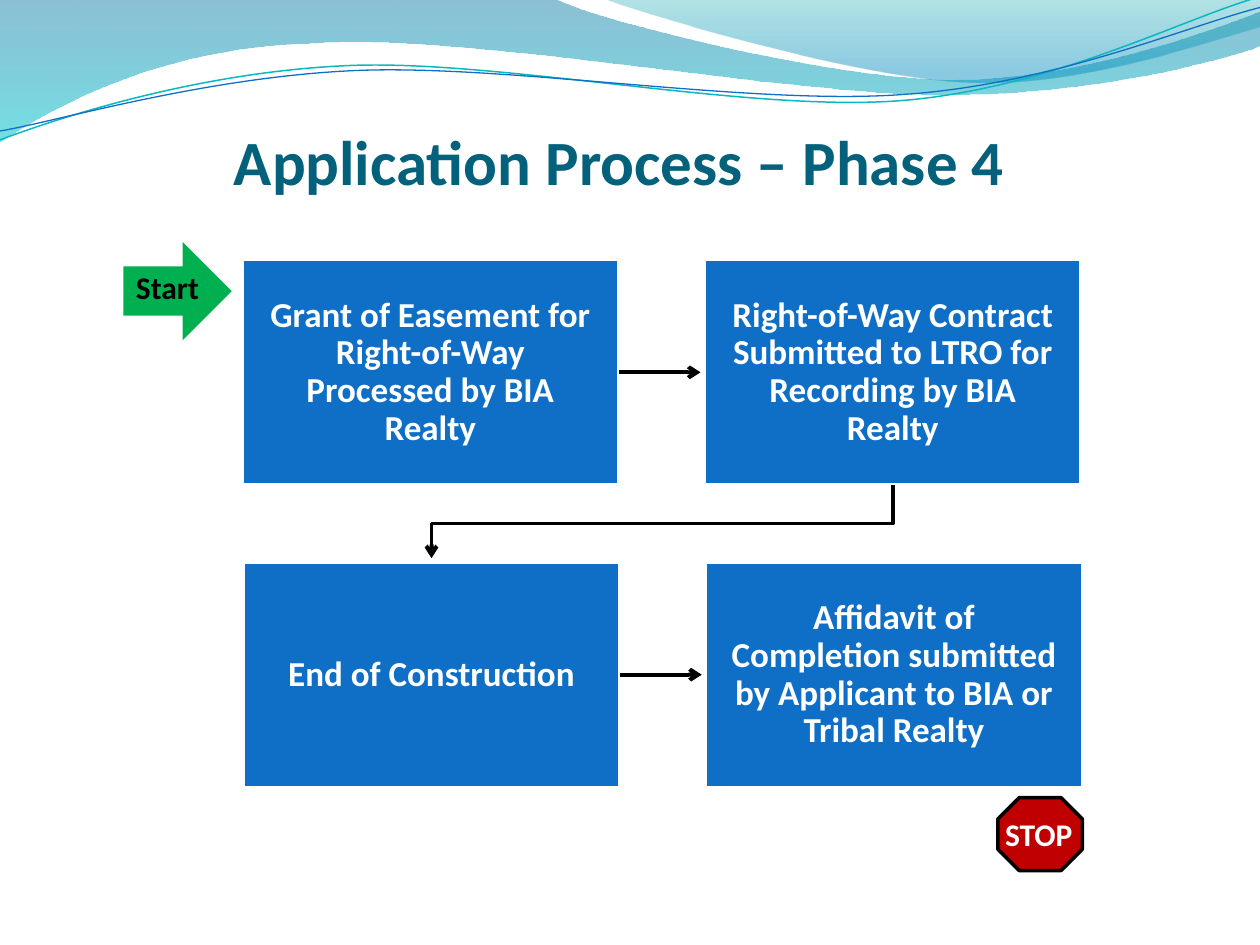
import math

from lxml import etree
from pptx import Presentation
from pptx import util as u
from pptx.dml.color import RGBColor
from pptx.enum import shapes, text
from pptx.oxml import parse_xml
from pptx.oxml.ns import nsdecls, qn

FONT = "Calibri"
BLUE, WHITE, BLACK = "0F6FC6", "FFFFFF", "000000"
BOX_WIDTH, BOX_HEIGHT = 2.99, 1.79
COLUMNS, ROWS = (1.92, 5.59), (2.06, 4.46)
ROW_SHIFT = 0.01
ARROW_GAP = 0.03
CURVE_TILT = -2.7
STEPS = [
    ["Grant of Easement for Right-of-Way Processed by BIA Realty",
     "Right-of-Way Contract Submitted to LTRO for Recording by BIA Realty"],
    ["End of Construction",
     "Affidavit of Completion submitted by Applicant to BIA or Tribal Realty"],
]

# Outlines: each segment lists its points; three points make a Bezier curve
BROAD_WAVE = [
    [(0, 0)], [(4.4, -0.01)], [(4.76, 0.17), (6.64, 0.63), (7.58, 0.63)],
    [(8.53, 0.63), (9.58, 0.26), (10, 0.09)], [(10.01, 0.36)],
    [(9.83, 0.44), (8.7, 0.76), (7.46, 0.75)],
    [(6.22, 0.75), (3.82, 0.28), (2.57, 0.34)],
    [(1.29, 0.36), (0.46, 0.83), (-0.01, 1.13)], [(0, 0)]]
RIGHT_WAVE = [
    [(4.79, -0.01)], [(5.09, 0.11), (6.82, 0.62), (7.69, 0.65)],
    [(8.56, 0.69), (9.61, 0.32), (10, 0.21)], [(10, 0)], [(4.79, -0.01)]]
TEAL_CURVE = [
    [(0, 1.11)], [(0.48, 0.93), (1.58, 0.57), (2.77, 0.52)],
    [(3.95, 0.47), (5.93, 0.89), (7.13, 0.8)],
    [(8.33, 0.71), (9.38, 0.15), (9.98, -0.02)]]
BLUE_CURVE = [
    [(0, 1.04)], [(0.47, 0.96), (1.64, 0.61), (2.83, 0.56)],
    [(4.03, 0.51), (5.97, 0.84), (7.17, 0.75)],
    [(8.36, 0.67), (9.41, 0.21), (10, 0.06)]]


def color(value):
    return RGBColor.from_string(value)


def set_line(shape, value, width):
    shape.line.color.rgb = color(value)
    shape.line.width = u.Pt(width)


def add_arrowhead(shape):
    etree.SubElement(shape.line._get_or_add_ln(), qn("a:tailEnd"), type="arrow")


def write(shape, wording, size, value):
    """Put one centred bold paragraph in a shape."""
    frame = shape.text_frame
    frame.text = wording
    frame.word_wrap = True
    frame.vertical_anchor = text.MSO_ANCHOR.MIDDLE
    paragraph = frame.paragraphs[0]
    paragraph.alignment = text.PP_ALIGN.CENTER
    font = paragraph.runs[0].font
    font.name, font.size, font.bold = FONT, u.Pt(size), True
    font.color.rgb = color(value)
    return paragraph


def turn(outline, center, degrees):
    """Turn every point of an outline clockwise about a centre."""
    cosine, sine = math.cos(math.radians(degrees)), math.sin(math.radians(degrees))
    x0, y0 = center
    return [[(x0 + (x - x0) * cosine - (y - y0) * sine,
              y0 + (x - x0) * sine + (y - y0) * cosine) for x, y in segment]
            for segment in outline]


def add_outline(slide, outline):
    """Build a freeform, then join each three-point segment into a curve."""
    points = [(u.Inches(x), u.Inches(y)) for segment in outline for x, y in segment]
    builder = slide.shapes.build_freeform(*points[0])
    builder.add_line_segments(points[1:], close=outline[0] == outline[-1])
    shape = builder.convert_to_shape()
    shape.shadow.inherit = False
    lines = iter(list(shape._element.iter(qn("a:lnTo"))))
    for segment in outline[1:]:
        parts = [next(lines) for _ in segment]
        if len(parts) == 3:
            curve = etree.Element(qn("a:cubicBezTo"))
            parts[0].addprevious(curve)
            for part in parts:
                curve.append(part[0])
                part.getparent().remove(part)
    return shape


def add_wave(slide, outline, stops):
    """Draw a closed wave; stops are (position %, colour, opacity %)."""
    shape = add_outline(slide, outline)
    shape.line.fill.background()
    shape.fill.background()
    stop_xml = "".join(
        f'<a:gs pos="{position * 1000}"><a:srgbClr val="{value}">'
        f'<a:alpha val="{opacity * 1000}"/></a:srgbClr></a:gs>'
        for position, value, opacity in stops)
    gradient = parse_xml(f'<a:gradFill {nsdecls("a")}><a:gsLst>{stop_xml}</a:gsLst>'
                         '<a:lin ang="5400000" scaled="0"/></a:gradFill>')
    properties = shape._element.spPr
    properties.replace(properties.find(qn("a:noFill")), gradient)


def add_path(slide, outline, value, width):
    shape = add_outline(slide, outline)
    shape.fill.background()
    set_line(shape, value, width)
    return shape


def add_tilted_curve(slide, outline, center, value, width):
    level = turn(outline, center, -CURVE_TILT)
    add_path(slide, level, value, width).rotation = CURVE_TILT


def add_preset(slide, kind, left, top, width, height, fill):
    shape = slide.shapes.add_shape(
        kind, u.Inches(left), u.Inches(top), u.Inches(width), u.Inches(height))
    shape.shadow.inherit = False
    shape.fill.solid()
    shape.fill.fore_color.rgb = color(fill)
    shape.line.fill.background()
    return shape


def add_step(slide, left, top, wording):
    box = add_preset(slide, shapes.MSO_SHAPE.RECTANGLE, left, top,
                     BOX_WIDTH, BOX_HEIGHT, BLUE)
    set_line(box, WHITE, 2)
    write(box, wording, 20, WHITE).line_spacing = 0.9
    frame = box.text_frame
    frame.margin_left = frame.margin_right = u.Inches(0.16)
    frame.margin_top = frame.margin_bottom = u.Inches(0.16)
    return box


def add_step_arrow(slide, box, next_box):
    middle = box.top + box.height // 2
    arrow = slide.shapes.add_connector(
        shapes.MSO_CONNECTOR.STRAIGHT, box.left + box.width, middle,
        next_box.left - u.Inches(ARROW_GAP), middle)
    arrow.begin_connect(box, 3)
    set_line(arrow, BLACK, 2.25)
    add_arrowhead(arrow)
    etree.SubElement(arrow._element.spPr, qn("a:effectLst"))


def add_label(slide, left, top, width, wording, value):
    label = slide.shapes.add_textbox(
        u.Inches(left), u.Inches(top), u.Inches(width), u.Inches(0.4))
    write(label, wording, 18, value)


def add_title(slide, wording):
    title = slide.shapes.title
    title.left, title.top = u.Inches(1.58), u.Inches(0.92)
    title.width, title.height = u.Inches(6.67), u.Inches(0.71)
    write(title, wording, 36, "04617B")


def main():
    presentation = Presentation()
    presentation.slide_width, presentation.slide_height = u.Inches(10), u.Inches(7.5)
    slide = presentation.slides.add_slide(presentation.slide_layouts[5])

    # Decorative waves along the top
    add_wave(slide, BROAD_WAVE, [(0, "0074A1", 45), (100, "00C6CF", 55)])
    add_wave(slide, RIGHT_WAVE, [(0, "00A1A9", 30), (80, "008BBF", 45)])
    add_tilted_curve(slide, TEAL_CURVE, (4.99, 0.58), "0AB8BF", 0.85)
    add_tilted_curve(slide, BLUE_CURVE, (5, 0.59), BLUE, 0.75)

    add_title(slide, "Application Process – Phase 4")

    # Process steps, joined left to right in each row
    for row, (top, wordings) in enumerate(zip(ROWS, STEPS)):
        boxes = [add_step(slide, left + row * ROW_SHIFT, top, wording)
                 for left, wording in zip(COLUMNS, wordings)]
        add_step_arrow(slide, *boxes)

    # Bent arrow from the end of the first row to the start of the second
    start_x = COLUMNS[1] + BOX_WIDTH / 2
    end_x = COLUMNS[0] + ROW_SHIFT + BOX_WIDTH / 2
    start_y, end_y = ROWS[0] + BOX_HEIGHT, ROWS[1] - ARROW_GAP
    turn_y = (start_y + ROWS[1]) / 2
    bend = [[(start_x, start_y)], [(start_x, turn_y)], [(end_x, turn_y)], [(end_x, end_y)]]
    add_arrowhead(add_path(slide, bend, BLACK, 2.25))

    # Start and stop signs
    add_preset(slide, shapes.MSO_SHAPE.RIGHT_ARROW, 0.98, 1.92, 0.86, 0.78, "00B050")
    add_label(slide, 0.58, 2.08, 1.5, "Start", BLACK)
    stop = add_preset(slide, shapes.MSO_SHAPE.OCTAGON, 7.92, 6.33, 0.67, 0.58, "C00000")
    set_line(stop, BLACK, 2)
    add_label(slide, 7.83, 6.42, 0.83, "STOP", WHITE)

    presentation.save("out.pptx")


if __name__ == "__main__":
    main()
